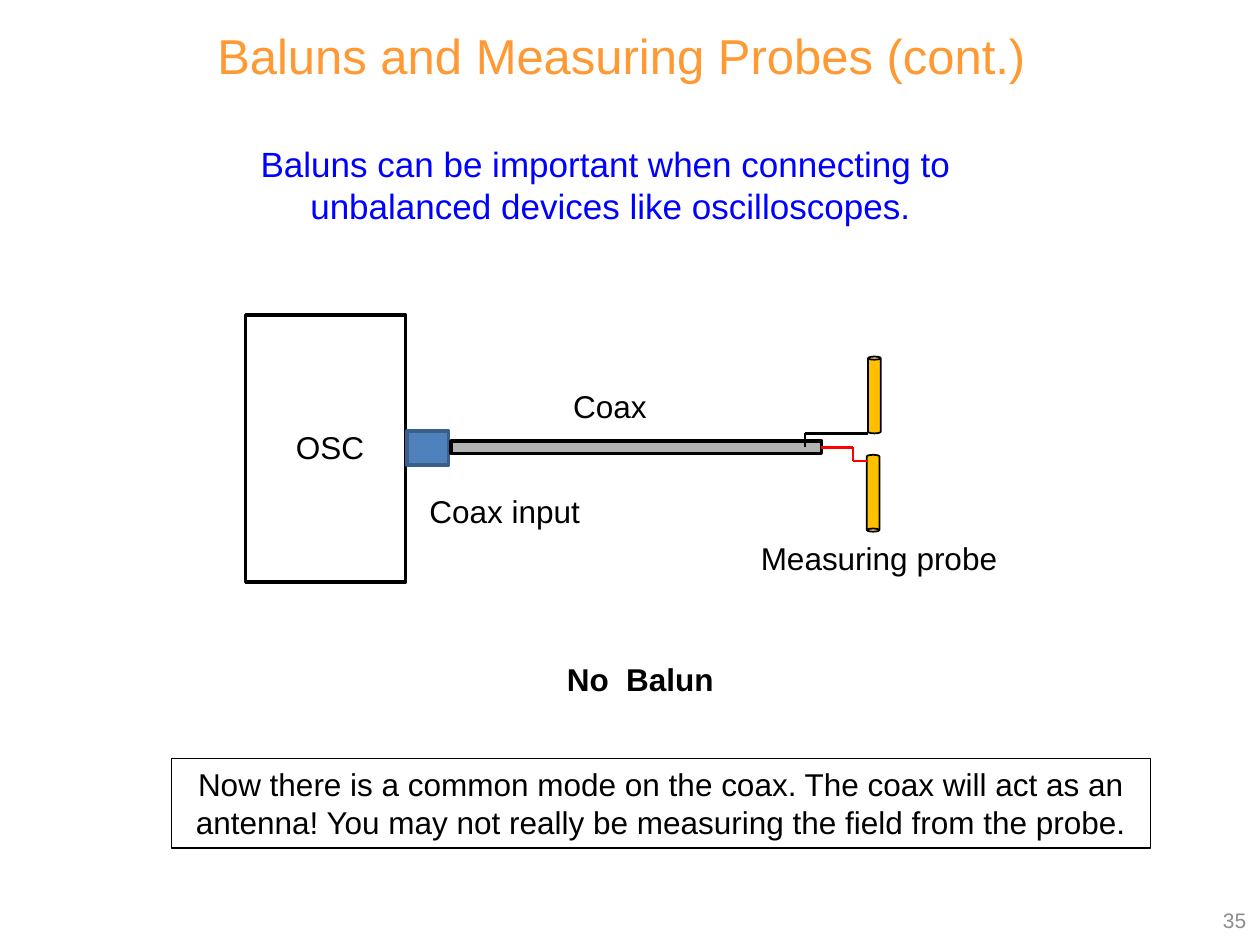
from lxml.etree import SubElement
from pptx import Presentation
from pptx.dml.color import RGBColor
from pptx.enum.shapes import MSO_CONNECTOR, MSO_SHAPE
from pptx.enum.text import MSO_ANCHOR, MSO_AUTO_SIZE, PP_ALIGN
from pptx.oxml.ns import qn
from pptx.util import Inches, Pt

COLORS = {
    "title": "FF9933",
    "message": "0000FF",
    "black": "000000",
    "number": "8C8C8C",
    "input": "4F81BD",
    "input_edge": "3A5F8C",
    "probe": "FFC000",
    "coax": "B2B2B2",
    "signal": "FF0000",
}


def color(name):
    """Return the named colour."""
    return RGBColor.from_string(COLORS[name])


def write_text(shape, lines, size=18, ink="black", bold=False,
               align=PP_ALIGN.LEFT, anchor=MSO_ANCHOR.TOP, wrap=False):
    """Fill a shape with formatted paragraphs."""
    frame = shape.text_frame
    frame.text = "\n".join(lines)
    frame_format = {"word_wrap": wrap, "vertical_anchor": anchor,
                    "auto_size": MSO_AUTO_SIZE.NONE}
    for name, value in frame_format.items():
        setattr(frame, name, value)
    font_format = {"name": "Arial", "size": Pt(size), "bold": bold}
    for paragraph in frame.paragraphs:
        paragraph.alignment = align
        font = paragraph.runs[0].font
        for name, value in font_format.items():
            setattr(font, name, value)
        font.color.rgb = color(ink)


def add_title(slide, text, left, top, width, height):
    """Place and format the title placeholder."""
    title = slide.shapes.title
    position = {"left": left, "top": top, "width": width, "height": height}
    for name, value in position.items():
        setattr(title, name, Inches(value))
    write_text(title, [text], size=28, ink="title",
               align=PP_ALIGN.CENTER, wrap=True)


def add_label(slide, lines, left, top, width, height=0.4, **text_format):
    """Add a text box."""
    label = slide.shapes.add_textbox(*map(Inches, (left, top, width, height)))
    write_text(label, lines, **text_format)


def add_block(shapes, kind, box, fill=None, edge="black", weight=2):
    """Add an outlined preset shape, filled or hollow."""
    block = shapes.add_shape(kind, *map(Inches, box))
    block.shadow.inherit = False
    if fill:
        block.fill.solid()
        block.fill.fore_color.rgb = color(fill)
    else:
        block.fill.background()
    block.line.color.rgb = color(edge)
    block.line.width = Pt(weight)
    return block


def add_wire(shapes, points, ink):
    """Join successive points with straight connectors."""
    for start, end in zip(points, points[1:]):
        wire = shapes.add_connector(MSO_CONNECTOR.STRAIGHT,
                                    *map(Inches, start + end))
        wire.line.color.rgb = color(ink)
        wire.line.width = Pt(1.5)
        SubElement(wire._element.spPr, qn("a:effectLst"))


def add_circuit(slide):
    """Draw the oscilloscope, coax and probe as one group."""
    shapes = slide.shapes.add_group_shape().shapes
    add_block(shapes, MSO_SHAPE.RECTANGLE, (1.95, 2.5, 1.27, 2.12))
    add_block(shapes, MSO_SHAPE.RECTANGLE, (3.23, 3.42, 0.33, 0.27),
              "input", "input_edge")
    add_block(shapes, MSO_SHAPE.CAN, (6.89, 2.83, 0.1, 0.61), "probe", weight=1)
    lower_arm = add_block(shapes, MSO_SHAPE.CAN, (6.88, 3.61, 0.1, 0.61),
                          "probe", weight=1)
    lower_arm._element.spPr.xfrm.set("flipV", "1")
    add_block(shapes, MSO_SHAPE.RECTANGLE, (3.58, 3.5, 2.94, 0.1), "coax")
    add_wire(shapes, [(6.52, 3.55), (6.77, 3.55), (6.77, 3.66), (6.89, 3.66)],
             "signal")
    add_wire(shapes, [(6.39, 3.55), (6.39, 3.44), (6.89, 3.44)], "black")


def main():
    """Build and save the slide."""
    presentation = Presentation()
    presentation.slide_width = Inches(10)
    presentation.slide_height = Inches(7.5)
    slide = presentation.slides.add_slide(presentation.slide_layouts[5])

    add_title(slide, "Baluns and Measuring Probes (cont.)",
              0.35, 0.15, 9.16, 0.57)
    add_label(slide, ["Baluns can be important when connecting to ",
                      "unbalanced devices like oscilloscopes."],
              1.95, 1.08, 5.79, 0.77, size=20, ink="message",
              align=PP_ALIGN.CENTER)
    add_circuit(slide)
    for text, left, top, width in [
        ("OSC", 2.25, 3.35, 0.75),
        ("Coax input", 3.31, 3.86, 1.41),
        ("Measuring probe", 5.94, 4.23, 2.1),
        ("Coax", 4.45, 3.02, 0.79),
    ]:
        add_label(slide, [text], left, top, width)
    add_label(slide, ["No  Balun"], 4.4, 5.19, 1.38, bold=True)
    note = add_block(slide.shapes, MSO_SHAPE.RECTANGLE,
                     (1.36, 6.02, 7.77, 0.71), weight=0.75)
    write_text(note, ["Now there is a common mode on the coax. The coax will "
                      "act as an antenna! You may not really be measuring "
                      "the field from the probe."],
               align=PP_ALIGN.CENTER, wrap=True)
    add_label(slide, ["35"], 7.66, 7.1, 2.33, size=12, ink="number",
              align=PP_ALIGN.RIGHT, anchor=MSO_ANCHOR.MIDDLE, wrap=True)
    presentation.save("out.pptx")


if __name__ == "__main__":
    main()
